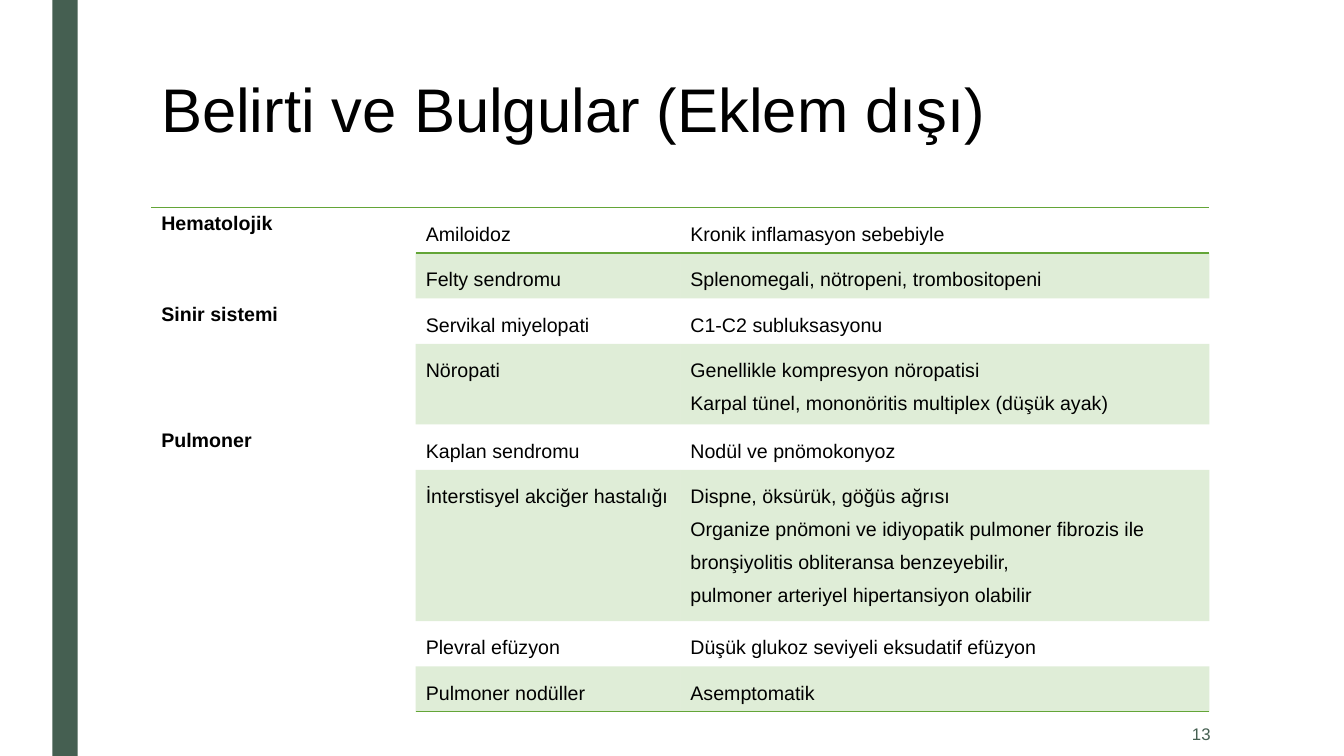
from lxml import etree
from pptx import Presentation
from pptx import util as u
from pptx.dml.color import RGBColor
from pptx.enum import shapes, text
from pptx.oxml import ns

BLACK = RGBColor(0x00, 0x00, 0x00)
DARK_GREEN = RGBColor(0x45, 0x5F, 0x51)
GREEN = RGBColor(0x63, 0xA5, 0x37)
FONT = "Arial"
NO_STYLE = "{2D5ABB26-0587-4C30-8999-92F81FD0307C}"
COLUMN_SHARES = (1, 1, 2)
ROW_HEIGHT = 1.04

SYSTEMS = [
    ("Hematolojik", [
        ("Amiloidoz", "Kronik inflamasyon sebebiyle"),
        ("Felty sendromu", "Splenomegali, nötropeni, trombositopeni"),
    ]),
    ("Sinir sistemi", [
        ("Servikal miyelopati", "C1-C2 subluksasyonu"),
        ("Nöropati", "Genellikle kompresyon nöropatisi\n"
                     "Karpal tünel, mononöritis multiplex (düşük ayak)"),
    ]),
    ("Pulmoner", [
        ("Kaplan sendromu", "Nodül ve pnömokonyoz"),
        ("İnterstisyel akciğer hastalığı",
         "Dispne, öksürük, göğüs ağrısı\n"
         "Organize pnömoni ve idiyopatik pulmoner fibrozis ile "
         "bronşiyolitis obliteransa benzeyebilir,\n"
         "pulmoner arteriyel hipertansiyon olabilir"),
        ("Plevral efüzyon", "Düşük glukoz seviyeli eksudatif efüzyon"),
        ("Pulmoner nodüller", "Asemptomatik"),
    ]),
]


def format_text(tf, size, color, bold=False, spacing=None, align=None):
    for p in tf.paragraphs:
        p.line_spacing = spacing
        p.alignment = align
        for r in p.runs:
            r.font.name = FONT
            r.font.size = u.Pt(size)
            r.font.bold = bold
            r.font.color.rgb = color


def add_bar(s, x, y, w, h):
    sp = s.shapes.add_shape(shapes.MSO_SHAPE.RECTANGLE,
                            u.Cm(x), u.Cm(y), u.Cm(w), u.Cm(h))
    sp.shadow.inherit = False
    sp.fill.solid()
    sp.fill.fore_color.rgb = DARK_GREEN
    sp.line.fill.background()


def add_text(s, x, y, w, h, words, anchor, **style):
    tf = s.shapes.add_textbox(u.Cm(x), u.Cm(y), u.Cm(w), u.Cm(h)).text_frame
    tf.word_wrap = True
    tf.vertical_anchor = anchor
    tf.text = words
    format_text(tf, **style)


def add_solid(parent, color):
    fill = etree.SubElement(parent, ns.qn("a:solidFill"))
    return etree.SubElement(fill, ns.qn("a:srgbClr"), val=str(color))


def style_cell(cell, sides, shaded):
    tcPr = cell._tc.get_or_add_tcPr()
    for side in sides:
        add_solid(etree.SubElement(tcPr, ns.qn(side), w=str(u.Pt(1))), GREEN)
    if shaded:
        color = add_solid(tcPr, GREEN)
        etree.SubElement(color, ns.qn("a:alpha"), val="20000")
    else:
        cell.fill.background()


def add_findings(s, x, y, w):
    count = sum(len(findings) for _, findings in SYSTEMS)
    table = s.shapes.add_table(count, len(COLUMN_SHARES), u.Cm(x), u.Cm(y),
                               u.Cm(w), u.Cm(ROW_HEIGHT * count)).table
    table.first_row = table.horz_banding = False
    table._tbl.tblPr.find(ns.qn("a:tableStyleId")).text = NO_STYLE
    for column, share in zip(table.columns, COLUMN_SHARES):
        column.width = u.Cm(w * share / sum(COLUMN_SHARES))

    row = 0
    for system, findings in SYSTEMS:
        first, last = row, row + len(findings) - 1
        head = table.cell(first, 0)
        head.merge(table.cell(last, 0))
        head.text = system
        format_text(head.text_frame, 14, BLACK, bold=True)
        for finding in findings:
            for col, words in enumerate(finding, 1):
                cell = table.cell(row, col)
                cell.text = words
                format_text(cell.text_frame, 14, BLACK, spacing=1.5)
            row += 1

        for i in range(first, last + 1):
            for col in range(len(COLUMN_SHARES)):
                top = i == 0
                bottom = i == count - 1 or (first == 0 and i == (last if col == 0 else 0))
                sides = ["a:lnT"] * top + ["a:lnB"] * bottom
                style_cell(table.cell(i, col), sides, col > 0 and i % 2 == 1)


def build():
    prs = Presentation()
    prs.slide_width, prs.slide_height = u.Cm(33.87), u.Cm(19.05)
    s = prs.slides.add_slide(prs.slide_layouts[6])
    add_bar(s, 1.32, 0, 0.64, 19.05)
    add_text(s, 3.81, 1.9, 26.67, 4.11, "Belirti ve Bulgular (Eklem dışı)",
             text.MSO_ANCHOR.TOP, size=44, color=BLACK, spacing=0.89)
    add_findings(s, 3.81, 5.23, 26.67)
    add_text(s, 26.31, 17.93, 4.45, 1.12, "13", text.MSO_ANCHOR.MIDDLE,
             size=12, color=DARK_GREEN, align=text.PP_ALIGN.RIGHT)
    prs.save("out.pptx")


if __name__ == "__main__":
    build()
